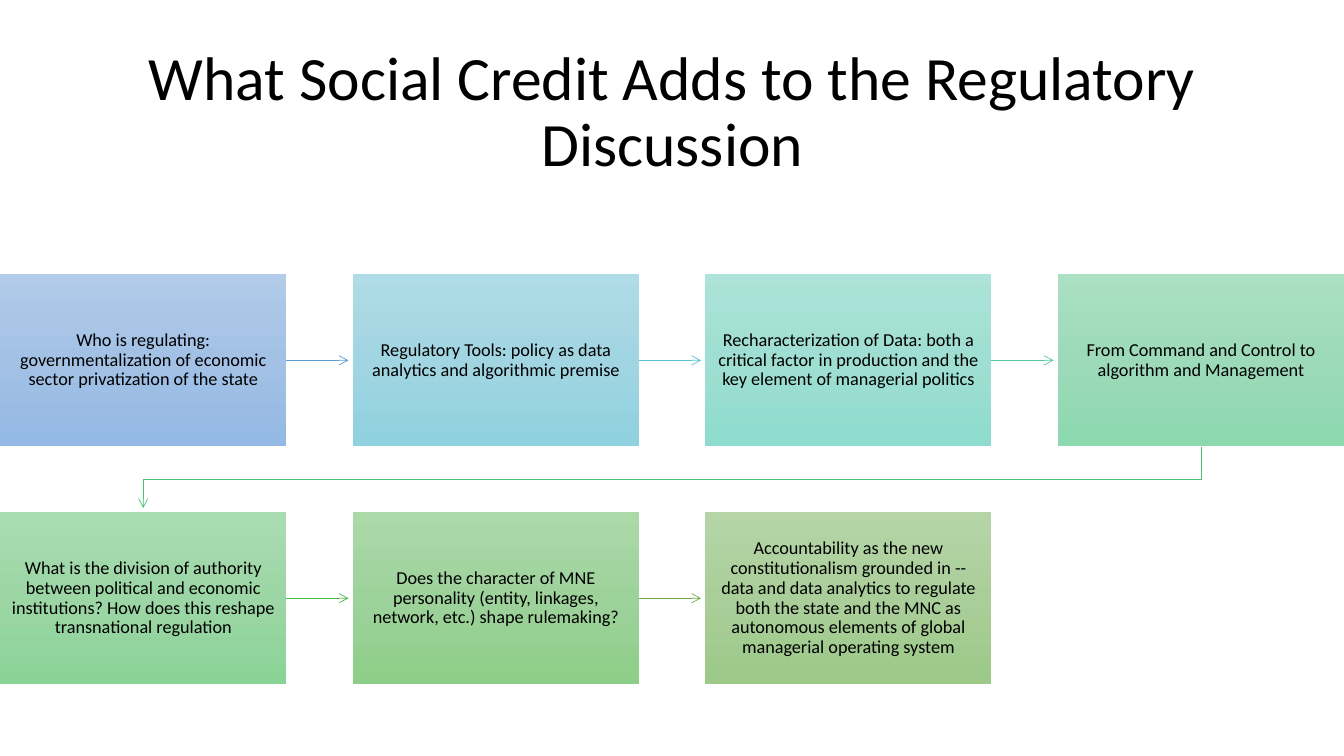
from copy import deepcopy
from dataclasses import dataclass

from lxml import etree
from pptx import Presentation
from pptx.dml.color import RGBColor
from pptx.enum import shapes, text
from pptx.oxml import ns
from pptx.util import Inches, Pt

TITLE = "What Social Credit Adds to the Regulatory Discussion"
STEPS = [
    ("Who is regulating: governmentalization of economic sector privatization of the state",
     ("B1CBE9", "A3C1E5", "93B9E4"), "5B9BD5"),
    ("Regulatory Tools: policy as data analytics and algorithmic premise",
     ("AFDCE6", "A1D5E1", "90D1E0"), "55C3CF"),
    ("Recharacterization of Data: both a critical factor in production and the key element "
     "of managerial politics",
     ("ADE3D9", "9FDED2", "8EDCCE"), "50C8A7"),
    ("From Command and Control to algorithm and Management",
     ("ABE0C3", "9DDAB9", "8CD8AF"), "4BC174"),
    ("What is the division of authority between political and economic institutions? "
     "How does this reshape transnational regulation",
     ("AADCB2", "9CD6A5", "8AD396"), "4ABA46"),
    ("Does the character of MNE personality (entity, linkages, network, etc.) shape rulemaking?",
     ("ABD9A8", "9ED29B", "8DCE88"), "70AD47"),
    ("Accountability as the new constitutionalism grounded in --data and data analytics to "
     "regulate both the state and the MNC as autonomous elements of global managerial "
     "operating system",
     ("B5D5A7", "AACE9A", "9CC987"), None),
]


@dataclass(frozen=True)
class Theme:
    font: str = "Calibri"
    ink: str = "000000"
    title_size: float = 44
    step_size: float = 13
    line_width: float = 0.5


THEME = Theme()
SLIDE_W, SLIDE_H = 13.33, 7.5
COLUMNS = 4
BOX_W, BOX_H = 2.84, 1.71
TOP, ROW_PITCH = 2.72, 2.36
PITCH = (SLIDE_W - BOX_W) / (COLUMNS - 1)
ARROW_GAP = 0.04


def write(tf, content, size):
    tf.word_wrap = True
    tf.vertical_anchor = text.MSO_ANCHOR.MIDDLE
    p = tf.paragraphs[0]
    p.alignment = text.PP_ALIGN.CENTER
    p.line_spacing = 0.9
    r = p.add_run()
    r.text = content
    r.font.name = THEME.font
    r.font.size = Pt(size)
    r.font.color.rgb = RGBColor.from_string(THEME.ink)


def fill_gradient(sp, colors):
    sp.fill.gradient()
    sp.fill.gradient_angle = 270
    stops = sp._element.spPr.find(".//" + ns.qn("a:gsLst"))
    stops.insert(1, deepcopy(stops[0]))
    for i, (stop, color) in enumerate(zip(sp.fill.gradient_stops, colors)):
        stop.position = i / (len(colors) - 1)
        stop.color.rgb = RGBColor.from_string(color)


def add_step(slide, x, y, content, colors):
    sp = slide.shapes.add_shape(shapes.MSO_SHAPE.RECTANGLE,
                                Inches(x), Inches(y), Inches(BOX_W), Inches(BOX_H))
    sp.shadow.inherit = False
    sp.line.fill.background()
    fill_gradient(sp, colors)
    tf = sp.text_frame
    tf.margin_left = tf.margin_right = tf.margin_top = tf.margin_bottom = Inches(0.1)
    write(tf, content, THEME.step_size)
    return sp


def style_arrow(sp, color):
    sp.line.color.rgb = RGBColor.from_string(color)
    sp.line.width = Pt(THEME.line_width)
    etree.SubElement(sp.line._get_or_add_ln(), ns.qn("a:tailEnd"), type="arrow")


def add_straight_arrow(slide, box, x, y, color):
    mid = y + BOX_H / 2
    line = slide.shapes.add_connector(
        shapes.MSO_CONNECTOR.STRAIGHT, Inches(x + BOX_W), Inches(mid),
        Inches(x + PITCH - ARROW_GAP), Inches(mid))
    line.begin_connect(box, 3)
    style_arrow(line, color)
    etree.SubElement(line._element.spPr, ns.qn("a:effectLst"))


def add_return_arrow(slide, x, y, color):
    start_x, end_x = x + BOX_W / 2, BOX_W / 2
    bottom, next_top = y + BOX_H, y + ROW_PITCH
    turn = (bottom + next_top) / 2
    builder = slide.shapes.build_freeform(Inches(start_x), Inches(bottom))
    builder.add_line_segments(
        [(Inches(px), Inches(py)) for px, py in
         ((start_x, turn), (end_x, turn), (end_x, next_top - ARROW_GAP))], close=False)
    sp = builder.convert_to_shape()
    sp.shadow.inherit = False
    sp.fill.background()
    style_arrow(sp, color)


def main():
    prs = Presentation()
    prs.slide_width, prs.slide_height = Inches(SLIDE_W), Inches(SLIDE_H)
    slide = prs.slides.add_slide(prs.slide_layouts[5])
    title = slide.shapes.title
    title.left, title.top = Inches(0.92), Inches(0.4)
    title.width, title.height = Inches(11.5), Inches(1.45)
    write(title.text_frame, TITLE, THEME.title_size)

    for i, (content, colors, arrow) in enumerate(STEPS):
        row, col = divmod(i, COLUMNS)
        x, y = col * PITCH, TOP + row * ROW_PITCH
        box = add_step(slide, x, y, content, colors)
        if arrow and col == COLUMNS - 1:
            add_return_arrow(slide, x, y, arrow)
        elif arrow:
            add_straight_arrow(slide, box, x, y, arrow)

    prs.save("out.pptx")


if __name__ == "__main__":
    main()
